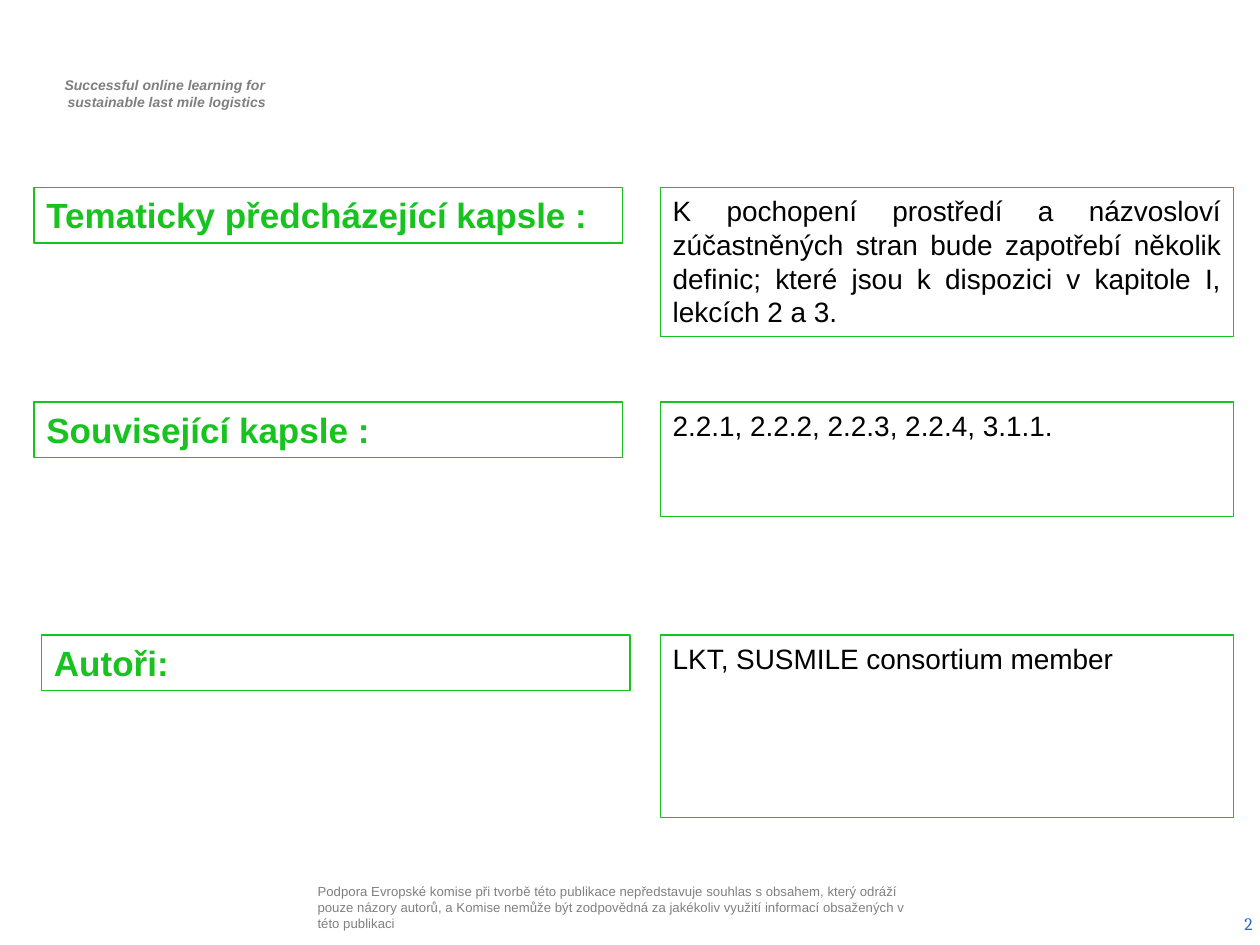
from dataclasses import dataclass

from pptx import Presentation
from pptx.dml.color import RGBColor
from pptx.enum.shapes import MSO_SHAPE
from pptx.enum.text import MSO_ANCHOR, PP_ALIGN
from pptx.util import Inches, Pt

RECTANGLE = MSO_SHAPE.RECTANGLE
TOP, MIDDLE = MSO_ANCHOR.TOP, MSO_ANCHOR.MIDDLE
LEFT, CENTER, RIGHT, JUSTIFY = PP_ALIGN.LEFT, PP_ALIGN.CENTER, PP_ALIGN.RIGHT, PP_ALIGN.JUSTIFY

SLIDE_WIDTH, SLIDE_HEIGHT = Inches(10), Inches(7.5)
COLUMN, ROW = SLIDE_WIDTH / 100, SLIDE_HEIGHT / 100
GREEN, WHITE, BLACK = "18C320", "FFFFFF", "000000"
LABEL_WIDTH, LABEL_HEIGHT = 46.7, 5.87
DETAIL_LEFT, DETAIL_WIDTH = 52.4, 45.5


@dataclass(frozen=True)
class Area:
    column: float
    row: float
    columns: float
    rows: float

    def emu(self) -> tuple[int, int, int, int]:
        return (round(self.column * COLUMN), round(self.row * ROW),
                round(self.columns * COLUMN), round(self.rows * ROW))


@dataclass(frozen=True)
class Style:
    size: float
    color: str
    font: str = "Arial"
    bold: bool = False
    italic: bool = False
    align: PP_ALIGN = LEFT
    anchor: MSO_ANCHOR = TOP
    inset_x: float = 0.1
    inset_y: float = 0.05
    indent: float = 0


@dataclass(frozen=True)
class Section:
    row: float
    label: str
    label_column: float
    detail: str
    detail_rows: float
    detail_align: PP_ALIGN


SECTIONS = [
    Section(19.87, "Tematicky předcházející kapsle :", 2.7,
            "K pochopení prostředí a názvosloví zúčastněných stran bude zapotřebí "
            "několik definic; které jsou k dispozici v kapitole I, lekcích 2 a 3.",
            15.73, JUSTIFY),
    Section(42.53, "Související kapsle :", 2.7,
            "2.2.1, 2.2.2, 2.2.3, 2.2.4, 3.1.1.", 12.13, JUSTIFY),
    Section(67.2, "Autoři:", 3.3,
            "LKT, SUSMILE consortium member", 19.33, LEFT),
]


def rgb(color: str) -> RGBColor:
    return RGBColor.from_string(color)


def write(shape, text: str, style: Style) -> None:
    frame = shape.text_frame
    frame.text = text
    frame.word_wrap = True
    frame.vertical_anchor = style.anchor
    frame.margin_left = frame.margin_right = Inches(style.inset_x)
    frame.margin_top = frame.margin_bottom = Inches(style.inset_y)
    for paragraph in frame.paragraphs:
        paragraph.alignment = style.align
        if style.indent:
            paragraph._p.get_or_add_pPr().set("marL", str(Inches(style.indent)))
        for run in paragraph.runs:
            run.font.name = style.font
            run.font.size = Pt(style.size)
            run.font.bold = style.bold
            run.font.italic = style.italic
            run.font.color.rgb = rgb(style.color)


def add_text(slide, area: Area, text: str, style: Style) -> None:
    write(slide.shapes.add_textbox(*area.emu()), text, style)


def add_frame(slide, area: Area, text: str, style: Style) -> None:
    frame = slide.shapes.add_shape(RECTANGLE, *area.emu())
    frame.shadow.inherit = False
    frame.fill.solid()
    frame.fill.fore_color.rgb = rgb(WHITE)
    frame.line.color.rgb = rgb(GREEN)
    frame.line.width = Pt(0.75)
    write(frame, text, style)


def add_section(slide, section: Section) -> None:
    add_frame(slide, Area(section.label_column, section.row, LABEL_WIDTH, LABEL_HEIGHT),
              section.label, Style(20, GREEN, bold=True))
    add_frame(slide, Area(DETAIL_LEFT, section.row, DETAIL_WIDTH, section.detail_rows),
              section.detail, Style(16, BLACK, align=section.detail_align))


def main() -> None:
    deck = Presentation()
    deck.slide_width, deck.slide_height = SLIDE_WIDTH, SLIDE_HEIGHT
    slide = deck.slides.add_slide(deck.slide_layouts[6])

    add_text(slide, Area(2.9, 7.47, 20.3, 4.93),
             "Successful online learning for \nsustainable last mile logistics",
             Style(8, "7F7F7F", bold=True, italic=True, align=CENTER, indent=0.04))
    add_text(slide, Area(24.8, 92.67, 48.1, 6.67),
             "Podpora Evropské komise při tvorbě této publikace nepředstavuje souhlas "
             "s obsahem, který odráží pouze názory autorů, a Komise nemůže být zodpovědná "
             "za jakékoliv využití informací obsažených v této publikaci",
             Style(7.5, "808080", anchor=MIDDLE, inset_x=0.04, inset_y=0.04))
    add_text(slide, Area(77.1, 95.07, 23.3, 5.33), "2",
             Style(10, "3366CC", font="Cambria", align=RIGHT, anchor=MIDDLE))
    for section in SECTIONS:
        add_section(slide, section)

    deck.save("out.pptx")


if __name__ == "__main__":
    main()
